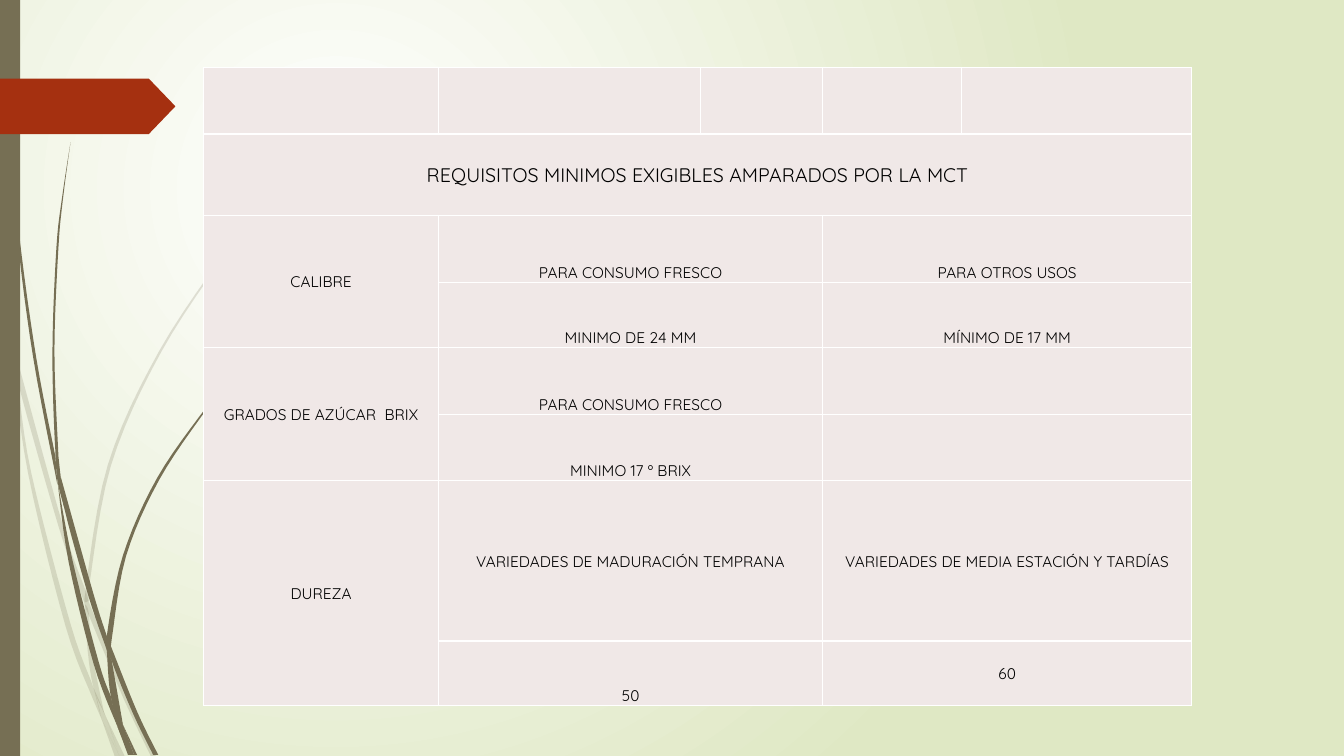
from lxml.etree import SubElement
from pptx import Presentation
from pptx.dml.color import RGBColor
from pptx.enum.shapes import MSO_SHAPE as Preset
from pptx.enum.text import MSO_ANCHOR as Anchor, PP_ALIGN as Align
from pptx.oxml.ns import qn
from pptx.util import Inches, Pt

WHITE = RGBColor(0xFF, 0xFF, 0xFF)
BLACK = RGBColor(0, 0, 0)
PALE_GREEN = RGBColor(0xDF, 0xE8, 0xC4)
OLIVE = RGBColor(0x76, 0x6F, 0x54)
RUST = RGBColor(0xA5, 0x30, 0x10)
ROSE = RGBColor(0xF0, 0xE8, 0xE7)
FONT = "Quicksand"

# Each piece of grass: the points down one edge, then back up the other.
FAINT_GRASS = [
    ([(0, 2.82), (0.09, 3.22), (0.11, 3.5)], [(0.1, 3.44), (0, 2.99)]),
    ([(0.14, 3.45), (0.62, 5.2), (0.85, 5.86)],
     [(0.84, 5.99), (0.58, 5.22), (0.17, 3.76), (0.14, 3.45)]),
    ([(0.88, 5.96), (0.92, 6.07), (1.27, 6.92), (1.55, 7.51)],
     [(1.5, 7.51), (1.23, 6.94), (0.88, 6.1)]),
    ([(1.05, 7.11), (1.24, 7.51)], [(1.19, 7.51), (1.05, 7.11)]),
    ([(0.11, 3.5), (0.17, 3.76), (0.31, 4.69), (0.7, 6.19), (0.93, 6.83), (1.01, 7.14)],
     [(0.92, 6.93), (0.65, 6.21), (0.28, 4.7), (0.11, 3.5)]),
    ([(0.84, 5.99), (0.87, 6.46), (0.93, 6.83), (1.05, 7.11)],
     [(1.03, 7.06), (0.91, 6.46), (0.88, 6.08), (0.84, 5.99)]),
    ([(3.12, 1.53), (2.68, 1.97), (2.28, 2.44), (1.58, 3.48), (1.07, 4.61), (0.85, 5.84),
      (0.88, 5.96)],
     [(0.88, 5.84), (1.1, 4.62), (1.6, 3.49), (2.29, 2.45), (2.68, 1.98), (3.12, 1.54)]),
    ([(1.01, 7.14), (1.14, 7.51)], [(1.19, 7.51), (1.01, 7.14)]),
    ([(0.85, 5.86), (0.84, 5.99), (0.88, 6.1)], [(0.88, 5.96), (0.85, 5.86)]),
    ([(0.93, 6.83), (1.05, 7.11), (1.19, 7.51)], [(1.01, 7.14), (0.93, 6.83)]),
]
DARK_GRASS = [
    ([(0.03, 0), (0.07, 1.1), (0.17, 2.33), (0.33, 3.55), (0.57, 4.81)],
     [(0.55, 4.53), (0.36, 3.55), (0.19, 2.32), (0.08, 1.09), (0.04, 0)]),
    ([(0.6, 4.72), (0.64, 5.05), (0.88, 5.92), (1.06, 6.45)],
     [(1.06, 6.31), (0.93, 5.9), (0.6, 4.72)]),
    ([(1.1, 6.41), (1.11, 6.56), (1.32, 7.08), (1.52, 7.49)],
     [(1.57, 7.49), (1.36, 7.06), (1.1, 6.41)]),
    ([(0.57, 4.77), (0.68, 5.57), (0.93, 6.59), (1.17, 7.22)],
     [(1.1, 6.91), (0.98, 6.57), (0.72, 5.56), (0.57, 4.77)]),
    ([(0.7, 1.41), (0.62, 1.93), (0.56, 2.45), (0.52, 3.49), (0.55, 4.49), (0.6, 4.72)],
     [(0.58, 4.53), (0.54, 3.49), (0.58, 2.45), (0.63, 1.93), (0.7, 1.41)]),
    ([(1.22, 7.19), (1.33, 7.49)], [(1.36, 7.49), (1.22, 7.19)]),
    ([(0.55, 4.49), (0.57, 4.77), (0.64, 5.05)], [(0.6, 4.72), (0.55, 4.49)]),
    ([(2.6, 3.44), (2.31, 3.73), (2.04, 4.05), (1.56, 4.74), (1.22, 5.51), (1.06, 6.31),
      (1.1, 6.41)],
     [(1.11, 6.33), (1.25, 5.52), (1.58, 4.76), (2.05, 4.06), (2.31, 3.74), (2.61, 3.44)]),
    ([(1.17, 7.22), (1.27, 7.49)], [(1.31, 7.49), (1.17, 7.22)]),
    ([(1.06, 6.45), (1.1, 6.91), (1.22, 7.19)], [(1.11, 6.56), (1.06, 6.45)]),
    ([(1.06, 6.31), (1.06, 6.45), (1.11, 6.56)], [(1.1, 6.41), (1.06, 6.31)]),
    ([(1.1, 6.91), (1.17, 7.22), (1.3, 7.49)], [(1.33, 7.49), (1.22, 7.19), (1.1, 6.91)]),
]

COLUMN_WIDTHS = [2.33, 2.6, 1.21, 1.38, 2.28]
ROW_HEIGHTS = [0.66, 0.81, 0.66, 0.65, 0.66, 0.66, 1.59, 0.64]
MIDDLE, BOTTOM = Anchor.MIDDLE, Anchor.BOTTOM
# Row, column, rows spanned, columns spanned, text, anchor
REQUIREMENTS = [
    (2, 0, 2, 1, "CALIBRE", MIDDLE),
    (2, 1, 1, 2, "PARA CONSUMO FRESCO", BOTTOM),
    (2, 3, 1, 2, "PARA OTROS USOS", BOTTOM),
    (3, 1, 1, 2, "MINIMO DE 24 MM", BOTTOM),
    (3, 3, 1, 2, "MÍNIMO DE 17 MM", BOTTOM),
    (4, 0, 2, 1, "GRADOS DE AZÚCAR  BRIX", MIDDLE),
    (4, 1, 1, 2, "PARA CONSUMO FRESCO", BOTTOM),
    (4, 3, 1, 2, "", MIDDLE),
    (5, 1, 1, 2, "MINIMO 17 º BRIX", BOTTOM),
    (5, 3, 1, 2, "", MIDDLE),
    (6, 0, 2, 1, "DUREZA", MIDDLE),
    (6, 1, 1, 2, "VARIEDADES DE MADURACIÓN TEMPRANA", MIDDLE),
    (6, 3, 1, 2, "VARIEDADES DE MEDIA ESTACIÓN Y TARDÍAS", MIDDLE),
    (7, 1, 1, 2, "50", BOTTOM),
    (7, 3, 1, 2, "60", MIDDLE),
]


def paint_background(slide):
    fill = slide.background.fill
    fill.gradient()
    for stop, color in zip(fill.gradient_stops, (WHITE, PALE_GREEN)):
        stop.color.rgb = color
    gradient = slide.element.find(".//" + qn("a:gradFill"))
    gradient.remove(gradient.find(qn("a:lin")))
    circle = SubElement(gradient, qn("a:path"), path="circle")
    SubElement(circle, qn("a:fillToRect"), l="50000", t="50000", r="100000", b="100000")


def paint(shape, color):
    shape.shadow.inherit = False
    shape.fill.solid()
    shape.fill.fore_color.rgb = color
    shape.line.fill.background()


def smooth(points, steps=6):
    """Return a Catmull-Rom curve through the points as short segments."""
    padded = [points[0], *points, points[-1]]
    curve = [points[0]]
    for a, b, c, d in zip(padded, padded[1:], padded[2:], padded[3:]):
        for step in range(1, steps + 1):
            t = step / steps
            curve.append(tuple(
                q + ((r - p) * t + (2 * p - 5 * q + 4 * r - s) * t ** 2
                     + (3 * q - p - 3 * r + s) * t ** 3) / 2
                for p, q, r, s in zip(a, b, c, d)))
    return curve


def add_grass(slide, pieces, left=0, top=0, opacity=100):
    for down, up in pieces:
        outline = [(Inches(x), Inches(y)) for x, y in smooth(down) + smooth(up)]
        builder = slide.shapes.build_freeform(*outline[0])
        builder.add_line_segments(outline[1:])
        blade = builder.convert_to_shape(Inches(left), Inches(top))
        paint(blade, OLIVE)
        if opacity < 100:
            color = blade.element.spPr.find(".//" + qn("a:srgbClr"))
            SubElement(color, qn("a:alpha"), val=str(opacity * 1000))


def add_block(slide, preset, color, left, top, width, height):
    block = slide.shapes.add_shape(
        preset, Inches(left), Inches(top), Inches(width), Inches(height))
    paint(block, color)
    return block


def write(cell, text, size=11, anchor=MIDDLE):
    cell.vertical_anchor = anchor
    cell.margin_left = cell.margin_right = cell.margin_top = Inches(0.01)
    cell.margin_bottom = 0
    paragraph = cell.text_frame.paragraphs[0]
    paragraph.alignment = Align.CENTER
    if text:
        run = paragraph.add_run()
        run.text = text
        run.font.size = Pt(size)
        run.font.name = FONT
        run.font.color.rgb = BLACK


def style_cell(cell):
    properties = cell._tc.get_or_add_tcPr()
    for side in ("a:lnL", "a:lnR", "a:lnT", "a:lnB"):
        border = SubElement(properties, qn(side), w=str(Pt(1)))
        SubElement(SubElement(border, qn("a:solidFill")), qn("a:srgbClr"), val=str(WHITE))
    cell.fill.solid()
    cell.fill.fore_color.rgb = ROSE


def add_requirements_table(slide, left, top):
    table = slide.shapes.add_table(
        len(ROW_HEIGHTS), len(COLUMN_WIDTHS), Inches(left), Inches(top),
        Inches(sum(COLUMN_WIDTHS)), Inches(sum(ROW_HEIGHTS))).table
    for column, width in zip(table.columns, COLUMN_WIDTHS):
        column.width = Inches(width)
    for row, height in zip(table.rows, ROW_HEIGHTS):
        row.height = Inches(height)
    for cell in table.iter_cells():
        style_cell(cell)
    heading = table.cell(1, 0)
    heading.merge(table.cell(1, 4))
    write(heading, "REQUISITOS MINIMOS EXIGIBLES AMPARADOS POR LA MCT", size=14)
    for row, column, tall, wide, text, anchor in REQUIREMENTS:
        cell = table.cell(row, column)
        cell.merge(table.cell(row + tall - 1, column + wide - 1))
        write(cell, text, anchor=anchor)


def main():
    deck = Presentation()
    deck.slide_width, deck.slide_height = Inches(13.33), Inches(7.5)
    slide = deck.slides.add_slide(deck.slide_layouts[6])
    paint_background(slide)
    add_grass(slide, FAINT_GRASS, opacity=20)
    add_grass(slide, DARK_GRASS)
    add_block(slide, Preset.RECTANGLE, OLIVE, 0, 0, 0.2, 7.5)
    tag = add_block(slide, Preset.PENTAGON, RUST, 0, 0.78, 1.74, 0.55)
    tag.adjustments[0] = 0.48
    add_requirements_table(slide, 2.02, 0.67)
    deck.save("out.pptx")


if __name__ == "__main__":
    main()
